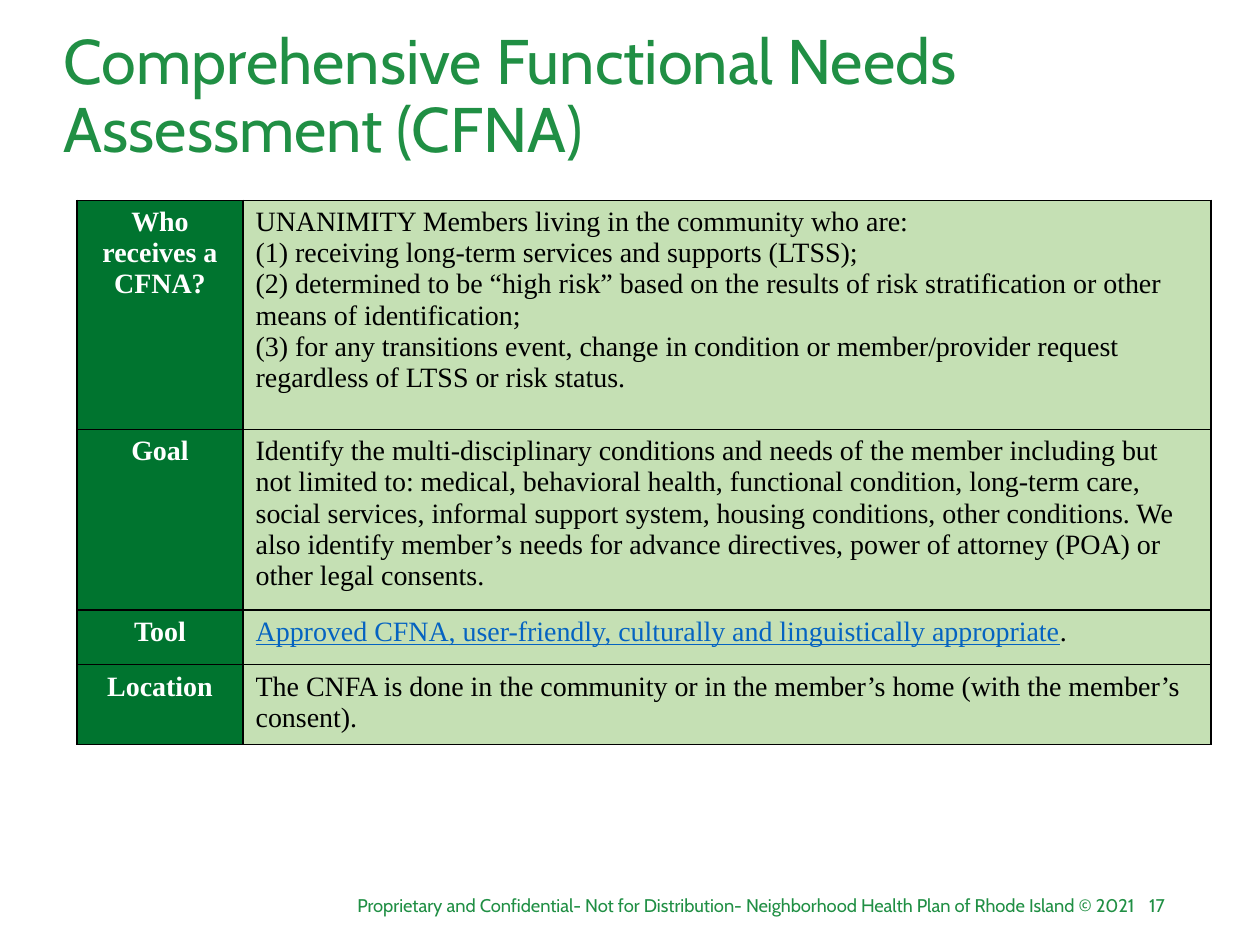
from lxml.etree import SubElement
from pptx import Presentation
from pptx.dml.color import RGBColor
from pptx.enum.text import MSO_ANCHOR, PP_ALIGN
from pptx.oxml.ns import qn
from pptx.util import Cm, Pt

HUE = {"title": "208F44", "head": "00742F", "body": "C5E0B4",
       "link": "0563C1", "white": "FFFFFF", "black": "000000"}
SANS, SERIF = "Cabin", "Times New Roman"

TITLE = "Comprehensive Functional Needs Assessment (CFNA)"
NOTICE = ("Proprietary and Confidential- Not for Distribution- "
          "Neighborhood Health Plan of Rhode Island © 2021")
PAGE = "17"

# Row label, row height in cm, paragraphs of the answer
ROWS = [
    ("Who receives a CFNA?", 4.62, [
        "UNANIMITY Members living in the community who are:",
        "(1) receiving long-term services and supports (LTSS);",
        "(2) determined to be “high risk” based on the results of risk "
        "stratification or other means of identification;",
        "(3) for any transitions event, change in condition or "
        "member/provider request regardless of LTSS or risk status."]),
    ("Goal", 3.64, [
        "Identify the multi-disciplinary conditions and needs of the member "
        "including but not limited to: medical, behavioral health, functional "
        "condition, long-term care, social services, informal support system, "
        "housing conditions, other conditions. We also identify member’s "
        "needs for advance directives, power of attorney (POA) or other "
        "legal consents."]),
    ("Tool", 1.1, [
        [("Approved CFNA, user-friendly, culturally and linguistically "
          "appropriate", "link"), (".", "black")]]),
    ("Location", 1.6, [
        "The CNFA is done in the community or in the member’s home "
        "(with the member’s consent)."]),
]
COLS = [3.35, 19.51]
LEFT, TOP = 1.55, 4.04


def write(frame, paras, font=SERIF, size=16, hue="black", bold=False,
          align=PP_ALIGN.LEFT, space=1.0):
    """Fill a frame; a paragraph is a string or a list of (text, hue)."""
    frame.word_wrap = True
    for i, para in enumerate(paras):
        line = frame.add_paragraph() if i else frame.paragraphs[0]
        line.alignment, line.line_spacing = align, space
        for text, tint in [(para, hue)] if isinstance(para, str) else para:
            run = line.add_run()
            run.text = text
            run.font.name, run.font.size = font, Pt(size)
            run.font.bold = bold
            run.font.underline = tint == "link"
            run.font.color.rgb = RGBColor.from_string(HUE[tint])


def add_box(slide, place, text, **style):
    box = slide.shapes.add_textbox(*map(Cm, place))
    write(box.text_frame, [text], font=SANS, hue="title", **style)
    return box


def paint(cell, hue):
    """Give a cell its fill and a thin black border on each side."""
    props = cell._tc.get_or_add_tcPr()
    for side in ("lnL", "lnR", "lnT", "lnB"):
        edge = SubElement(props, qn(f"a:{side}"), w=str(Pt(1)))
        fill = SubElement(edge, qn("a:solidFill"))
        SubElement(fill, qn("a:srgbClr"), val=HUE["black"])
    cell.fill.solid()
    cell.fill.fore_color.rgb = RGBColor.from_string(HUE[hue])


def add_grid(slide):
    high = sum(row[1] for row in ROWS)
    grid = slide.shapes.add_table(len(ROWS), len(COLS), Cm(LEFT), Cm(TOP),
                                  Cm(sum(COLS)), Cm(high)).table
    for col, width in zip(grid.columns, COLS):
        col.width = Cm(width)
    for row, (label, height, paras) in zip(grid.rows, ROWS):
        row.height = Cm(height)
        head, body = row.cells
        paint(head, "head")
        paint(body, "body")
        write(head.text_frame, [label], hue="white", bold=True,
              align=PP_ALIGN.CENTER)
        write(body.text_frame, paras)


def main():
    deck = Presentation()
    deck.slide_width, deck.slide_height = Cm(25.4), Cm(19.05)
    slide = deck.slides.add_slide(deck.slide_layouts[6])
    title = add_box(slide, (1.04, 0.38, 22.86, 3.18), TITLE,
                    size=36, space=0.9)
    title.text_frame.vertical_anchor = MSO_ANCHOR.MIDDLE
    add_grid(slide)
    for text, left, width in ((NOTICE, 6.35, 16.79), (PAGE, 22.56, 1.17)):
        add_box(slide, (left, 17.91, width, 0.71), text,
                size=10.5, align=PP_ALIGN.RIGHT)
    deck.save("out.pptx")


if __name__ == "__main__":
    main()
